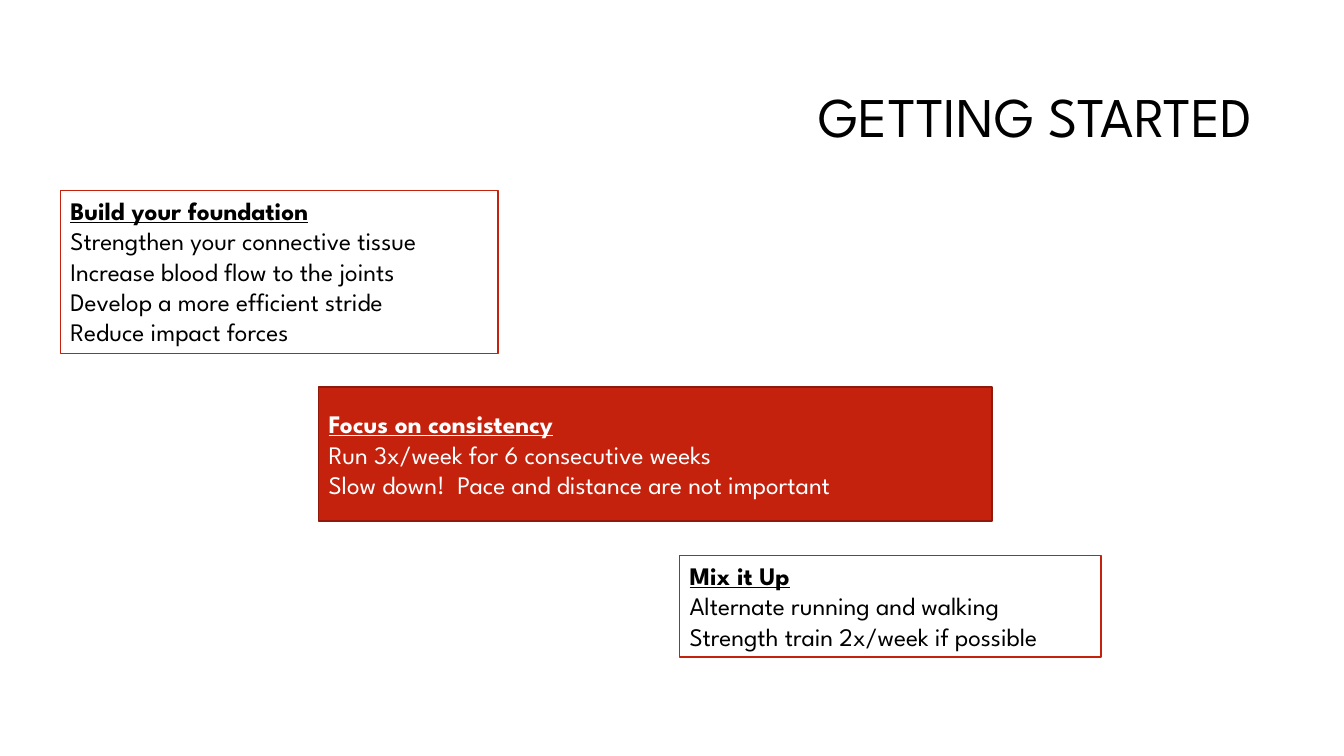
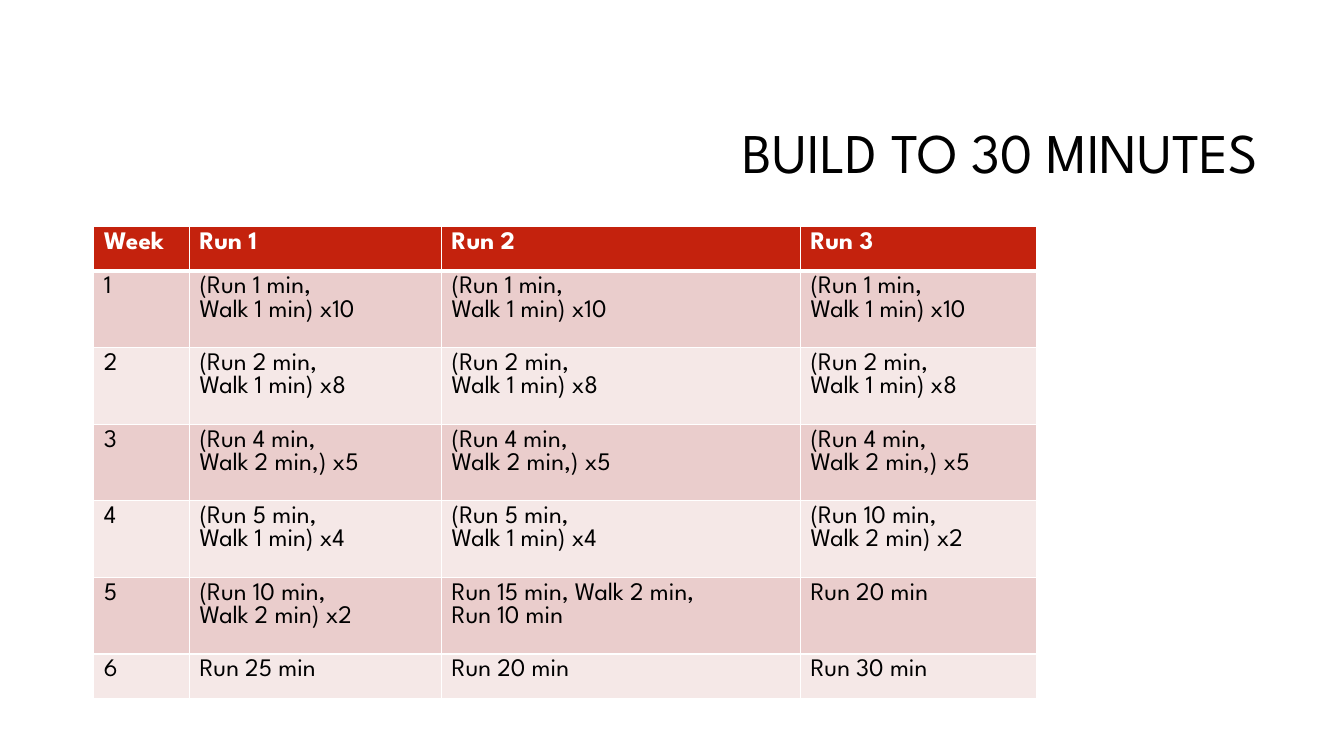
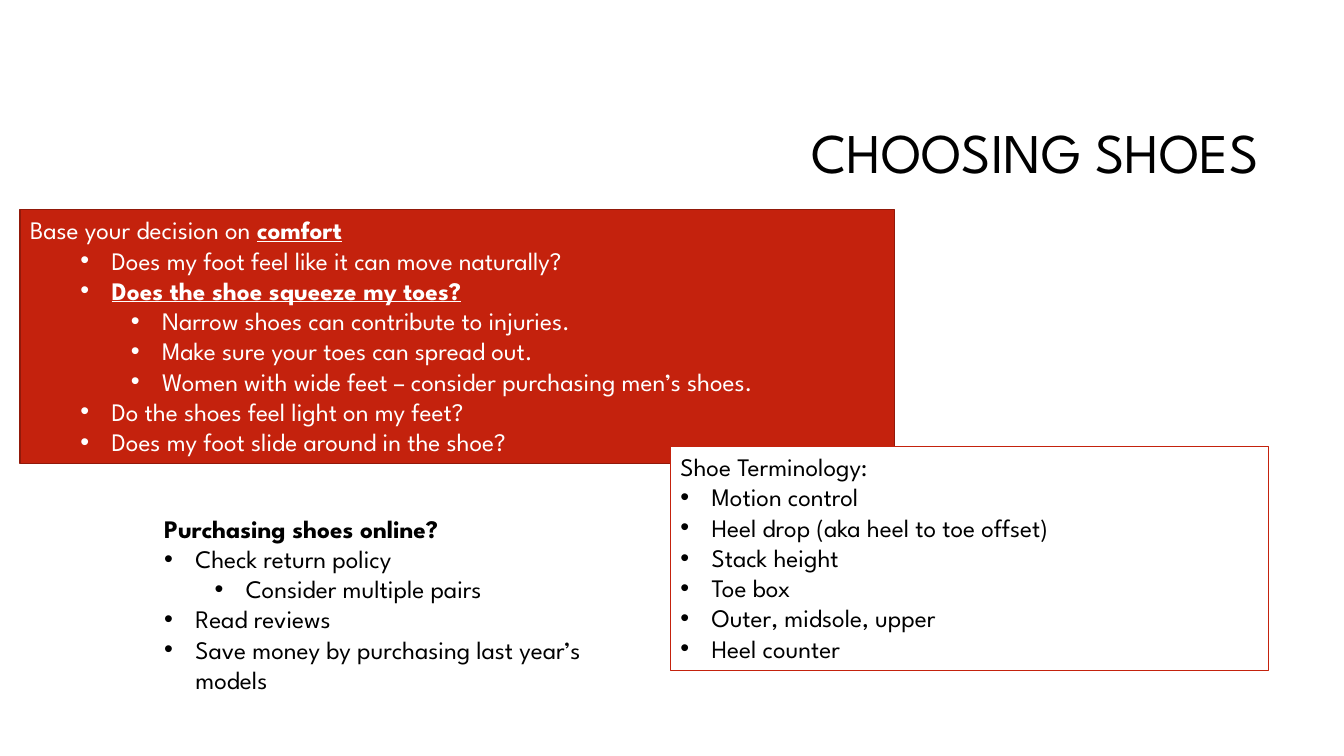
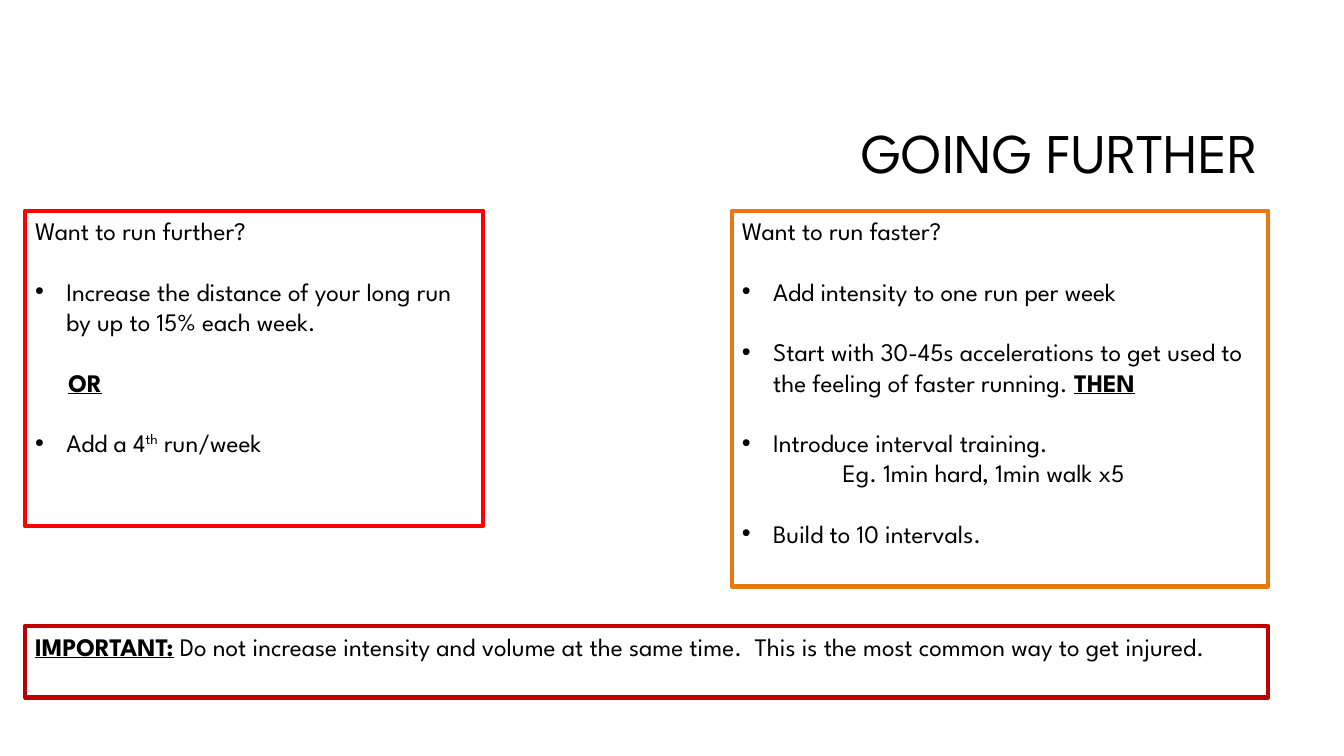
from lxml import etree
from pptx import Presentation
from pptx.dml.color import RGBColor
from pptx.enum.shapes import MSO_SHAPE
from pptx.enum.text import MSO_ANCHOR, PP_ALIGN
from pptx.oxml.ns import qn
from pptx.util import Pt

PX = 9144
FONT = "League Spartan"
BLACK = RGBColor(0x00, 0x00, 0x00)
WHITE = RGBColor(0xFF, 0xFF, 0xFF)
RED = RGBColor(0xC4, 0x22, 0x0D)
DEEP = RGBColor(0x91, 0x19, 0x0A)
BRIGHT = RGBColor(0xFF, 0x00, 0x00)
ORANGE = RGBColor(0xEB, 0x77, 0x12)
DARK = RGBColor(0xC0, 0x00, 0x00)
ROSE = RGBColor(0xEA, 0xCD, 0xCC)
PALE = RGBColor(0xF5, 0xE8, 0xE7)
RECT = MSO_SHAPE.RECTANGLE
TOP, MIDDLE = MSO_ANCHOR.TOP, MSO_ANCHOR.MIDDLE
LEFT, RIGHT = PP_ALIGN.LEFT, PP_ALIGN.RIGHT
GAP = 21.6
HANG = 31
STEP = 50


def scale(*sizes):
    """Turn px lengths into EMU."""
    return [size * PX for size in sizes]


def bold(text):
    """Give a bold run."""
    return text, "b"


def key(text):
    """Give a bold underlined run."""
    return text, "bu"


def line(*runs, left=0, gap=0):
    """Describe a plain paragraph."""
    return runs, left, False, gap


def dot(*runs, level=0, gap=0):
    """Describe a bulleted paragraph."""
    return runs, HANG + level * STEP, True, gap


def write(frame, lines, color=BLACK, size=18, align=LEFT, pitch=None):
    """Fill a text frame run by run."""
    frame.word_wrap = True
    for index, (runs, left, mark, gap) in enumerate(lines):
        para = frame.add_paragraph() if index else frame.paragraphs[0]
        para.alignment = align
        if pitch:
            para.line_spacing = pitch
        if gap:
            para.space_before = Pt(gap)
        props = para._p.get_or_add_pPr()
        if left:
            props.set("marL", str(left * PX))
        if mark:
            props.set("indent", str(-HANG * PX))
            etree.SubElement(props, qn("a:buFont")).set("typeface", "Arial")
            etree.SubElement(props, qn("a:buChar")).set("char", "•")
        for item in runs:
            text, style = item if isinstance(item, tuple) else (item, "")
            run = para.add_run()
            run.text = text
            font = run.font
            font.name, font.size = FONT, Pt(size)
            font.color.rgb = color
            font.bold = "b" in style
            font.underline = "u" in style
            if "^" in style:
                run._r.get_or_add_rPr().set("baseline", "30000")


def note(slide, box, lines):
    """Place a bare text box."""
    frame = slide.shapes.add_textbox(*scale(*box)).text_frame
    write(frame, lines)


def panel(slide, box, lines, fill=None, edge=RED, width=1, color=BLACK,
          anchor=TOP):
    """Place a framed text panel."""
    shape = slide.shapes.add_shape(RECT, *scale(*box))
    shape.shadow.inherit = False
    if fill is None:
        shape.fill.background()
    else:
        shape.fill.solid()
        shape.fill.fore_color.rgb = fill
    shape.line.color.rgb = edge
    shape.line.width = Pt(width)
    shape.text_frame.vertical_anchor = anchor
    write(shape.text_frame, lines, color)


def page(deck, title, box=(316, 84, 942, 141)):
    """Add a blank slide with its title."""
    slide = deck.slides.add_slide(deck.slide_layouts[6])
    frame = slide.shapes.add_textbox(*scale(*box)).text_frame
    frame.vertical_anchor = MIDDLE
    write(frame, [line(title)], size=40, align=RIGHT, pitch=0.9)
    return slide


def border(cell, base):
    """Draw white cell borders."""
    props = cell._tc.get_or_add_tcPr()
    sides = (("a:lnL", 1), ("a:lnR", 1), ("a:lnT", 1), ("a:lnB", base))
    for index, (tag, width) in enumerate(sides):
        edge = etree.Element(qn(tag), w=str(Pt(width)))
        fill = etree.SubElement(edge, qn("a:solidFill"))
        etree.SubElement(fill, qn("a:srgbClr")).set("val", str(WHITE))
        props.insert(index, edge)


def grid(slide, left, top, cols, rows, data):
    """Place the plan table."""
    box = scale(left, top, sum(cols), sum(rows))
    table = slide.shapes.add_table(len(rows), len(cols), *box).table
    for col, width in zip(table.columns, cols):
        col.width = width * PX
    for index, (row, height) in enumerate(zip(table.rows, rows)):
        row.height = height * PX
        head = index == 0
        for cell, text in zip(row.cells, data[index]):
            cell.fill.solid()
            cell.fill.fore_color.rgb = RED if head else (PALE, ROSE)[index % 2]
            border(cell, 3 if head else 1)
            lines = [line(bold(part) if head else part)
                     for part in text.split("\n")]
            write(cell.text_frame, lines, WHITE if head else BLACK)


def start(deck):
    """Build the getting started slide."""
    slide = page(deck, "GETTING STARTED", (310, 49, 942, 139))
    panel(slide, (60, 189, 434, 162), [
        line(key("Build your foundation")),
        line("Strengthen your connective tissue"),
        line("Increase blood flow to the joints"),
        line("Develop a more efficient stride"),
        line("Reduce impact forces"),
    ], WHITE)
    panel(slide, (674, 551, 418, 101), [
        line(key("Mix it Up")),
        line("Alternate running and walking"),
        line("Strength train 2x/week if possible"),
    ], WHITE)
    panel(slide, (316, 384, 668, 133), [
        line(key("Focus on consistency")),
        line("Run 3x/week for 6 consecutive weeks"),
        line("Slow down!  Pace and distance are not important"),
    ], RED, DEEP, color=WHITE, anchor=MIDDLE)


def plan(deck):
    """Build the weekly plan slide."""
    slide = page(deck, "BUILD TO 30 MINUTES")
    one = "(Run 1 min,\nWalk 1 min) x10"
    two = "(Run 2 min,\nWalk 1 min) x8"
    four = "(Run 4 min,\nWalk 2 min,) x5"
    five = "(Run 5 min,\nWalk 1 min) x4"
    ten = "(Run 10 min,\nWalk 2 min) x2"
    grid(slide, 93, 225, (95, 250, 356, 234), (44, *[76] * 5, 44), [
        ("Week", "Run 1", "Run 2", "Run 3"),
        ("1", one, one, one),
        ("2", two, two, two),
        ("3", four, four, four),
        ("4", five, five, ten),
        ("5", ten, "Run 15 min, Walk 2 min,\nRun 10 min", "Run 20 min"),
        ("6", "Run 25 min", "Run 20 min", "Run 30 min"),
    ])


def shoes(deck):
    """Build the shoe choice slide."""
    slide = page(deck, "CHOOSING SHOES")
    panel(slide, (20, 208, 867, 252), [
        line("Base your decision on ", key("comfort")),
        dot("Does my foot feel like it can move naturally?", level=1),
        dot(key("Does the shoe squeeze my toes?"), level=1),
        dot("Narrow shoes can contribute to injuries.", level=2),
        dot("Make sure your toes can spread out.", level=2),
        dot("Women with wide feet – consider purchasing men’s shoes.",
            level=2),
        dot("Do the shoes feel light on my feet?", level=1),
        dot("Does my foot slide around in the shoe?", level=1),
    ], RED, DEEP, color=WHITE)
    panel(slide, (665, 443, 593, 222), [
        line("Shoe Terminology:"),
        dot("Motion control"),
        dot("Heel drop (aka heel to toe offset)"),
        dot("Stack height"),
        dot("Toe box"),
        dot("Outer, midsole, upper"),
        dot("Heel counter"),
    ], WHITE)
    note(slide, (153, 504, 452, 222), [
        line(bold("Purchasing shoes online?")),
        dot("Check return policy"),
        dot("Consider multiple pairs", level=1),
        dot("Read reviews"),
        dot("Save money by purchasing last year’s models"),
    ])


def further(deck):
    """Build the going further slide."""
    slide = page(deck, "GOING FURTHER")
    panel(slide, (25, 209, 454, 313), [
        line("Want to run further?"),
        dot("Increase the distance of your long run by up to 15% each week.",
            gap=GAP),
        line(key("OR"), left=33, gap=GAP),
        dot("Add a 4", ("th", "^"), " run/week", gap=GAP),
    ], edge=BRIGHT, width=3)
    panel(slide, (726, 209, 532, 373), [
        line("Want to run faster?"),
        dot("Add intensity to one run per week", gap=GAP),
        dot("Start with 30-45s accelerations to get used to the feeling of "
            "faster running. ", key("THEN"), gap=GAP),
        dot("Introduce interval training.", gap=GAP),
        line("Eg. 1min hard, 1min walk x5", left=100),
        dot("Build to 10 intervals.", gap=GAP),
    ], edge=ORANGE, width=3)
    panel(slide, (25, 621, 1233, 71), [
        line(key("IMPORTANT:"), " Do not increase intensity and volume at the "
             "same time.  This is the most common way to get injured."),
    ], edge=DARK, width=3)


def main():
    """Build and save the deck."""
    deck = Presentation()
    deck.slide_width, deck.slide_height = scale(1333, 750)
    for build in (start, plan, shoes, further):
        build(deck)
    deck.save("out.pptx")


if __name__ == "__main__":
    main()
